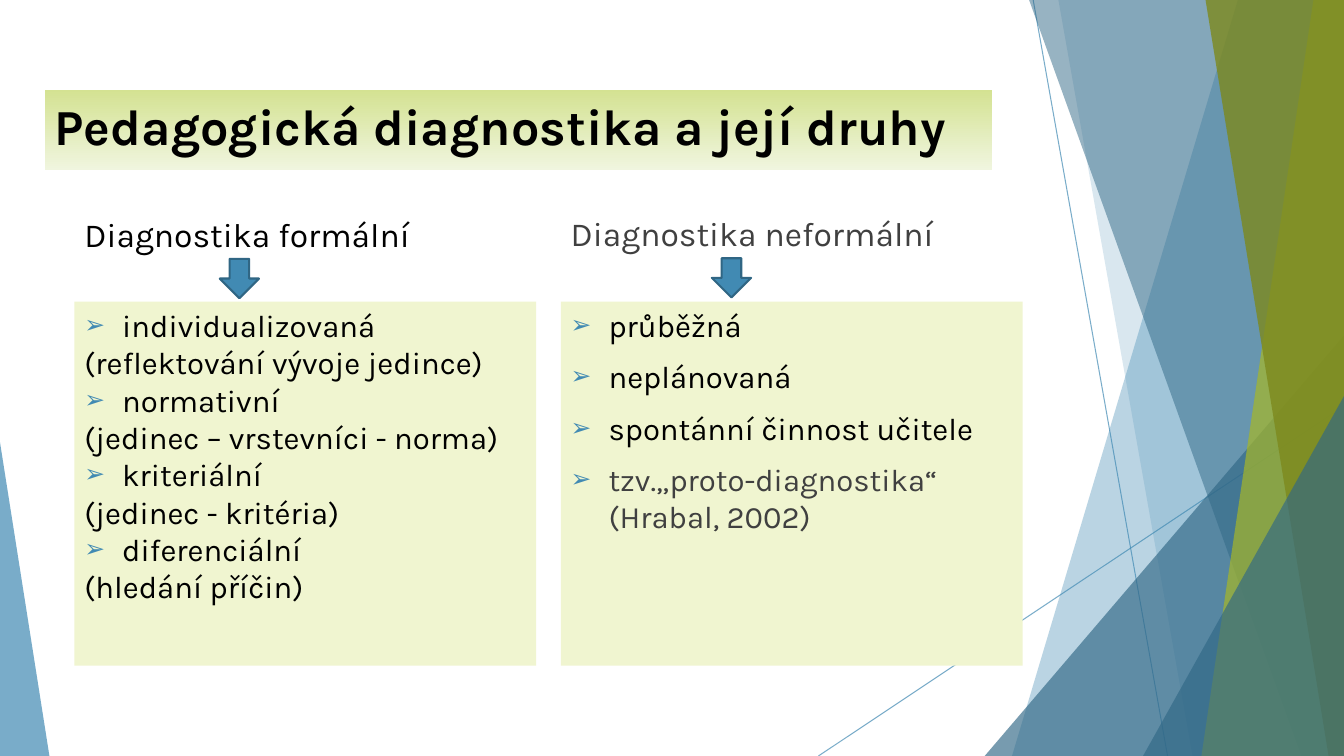
from pptx import Presentation
from pptx.dml.color import RGBColor
from pptx.enum.shapes import MSO_CONNECTOR, MSO_SHAPE
from pptx.enum.text import MSO_ANCHOR, PP_ALIGN
from pptx.oxml.ns import qn
from pptx.util import Pt
from lxml import etree

RECT, TRIANGLE, ARROW = MSO_SHAPE.RECTANGLE, MSO_SHAPE.ISOSCELES_TRIANGLE, MSO_SHAPE.DOWN_ARROW
STRAIGHT = MSO_CONNECTOR.STRAIGHT
LEFT, JUSTIFY = PP_ALIGN.LEFT, PP_ALIGN.JUSTIFY
TOP, BOTTOM = MSO_ANCHOR.TOP, MSO_ANCHOR.BOTTOM

FONT = "Karla"
W, H = 960, 540
COLORS = {
    "blue": "418AB3", "navy": "316886", "outline": "306684",
    "lime": "A6B727", "olive": "7D891D", "panel": "F0F5D0",
    "title_top": "D4E292", "title_end": "F0F5DF",
    "black": "000000", "grey": "404040",
}

# Content
TITLE = "Pedagogická diagnostika a její druhy"
# Each item: text, bulleted, colour
COLUMNS = [
    {"heading": "Diagnostika formální", "color": "black", "left": 53.2,
     "heading_bottom": 185, "arrow": (157, 185), "align": LEFT, "gap": 0,
     "items": [
         ("individualizovaná", True, "black"),
         ("(reflektování vývoje jedince)", False, "black"),
         ("normativní", True, "black"),
         ("(jedinec – vrstevníci - norma)", False, "black"),
         ("kriteriální", True, "black"),
         ("(jedinec - kritéria)", False, "black"),
         ("diferenciální", True, "black"),
         ("(hledání příčin)", False, "black")]},
    {"heading": "Diagnostika neformální", "color": "grey", "left": 400.6,
     "heading_bottom": 184.5, "arrow": (508.5, 184.5), "align": JUSTIFY, "gap": 10,
     "items": [
         ("průběžná", True, "black"),
         ("neplánovaná", True, "black"),
         ("spontánní činnost učitele", True, "black"),
         ("tzv.„proto-diagnostika“ (Hrabal, 2002)", True, "grey")]},
]

# Decoration, back to front
LINES = [((738, 0), (834, H)), ((W, 290), (584.6, H))]
# Band: left edge at the top and bottom; wedge: left, top, right, apex position
DECOR = [
    ("band", (884.2, 722.9), "blue", 36),
    ("band", (756, 851.8), "blue", 20),
    ("wedge", (703.4, 239.8, W, 1), "navy", 66),
    ("band", (735.1, 929.5), "navy", 50),
    ("band", (938.2, 858.2), "lime", 70),
    ("band", (861.1, 949), "olive", 80),
    ("wedge", (816.5, 283, W, 1), "navy", 66),
    ("wedge", (0, 316, 35.3, 0), "blue", 70),
]


def rgb(name):
    return RGBColor.from_string(COLORS[name])


def set_alpha(shape, percent):
    for clr in shape._element.spPr.iter(qn("a:srgbClr")):
        etree.SubElement(clr, qn("a:alpha")).set("val", str(percent * 1000))


def paint(shape, fill):
    shape.shadow.inherit = False
    shape.fill.solid()
    shape.fill.fore_color.rgb = rgb(fill)
    shape.line.fill.background()


def add_box(kind, x, y, w, h, fill):
    s = shapes.add_shape(kind, Pt(x), Pt(y), Pt(w), Pt(h))
    paint(s, fill)
    return s


def write(p, text, size, color, bold=False):
    p.text = text
    f = p.runs[0].font
    f.name, f.size, f.bold = FONT, Pt(size), bold
    f.color.rgb = rgb(color)


def add_bullet(p):
    pPr = p._p.get_or_add_pPr()
    pPr.set("marL", str(Pt(27)))
    pPr.set("indent", str(Pt(-27)))
    clr = etree.SubElement(pPr, qn("a:buClr"))
    etree.SubElement(clr, qn("a:srgbClr")).set("val", COLORS["blue"])
    etree.SubElement(pPr, qn("a:buSzPct")).set("val", "80000")
    etree.SubElement(pPr, qn("a:buFont")).set("typeface", FONT)
    etree.SubElement(pPr, qn("a:buChar")).set("char", "➢")


prs = Presentation()
prs.slide_width, prs.slide_height = Pt(W), Pt(H)
shapes = prs.slides.add_slide(prs.slide_layouts[6]).shapes

# Thin lines
for (x1, y1), (x2, y2) in LINES:
    s = shapes.add_connector(STRAIGHT, Pt(x1), Pt(y1), Pt(x2), Pt(y2))
    s.line.width = Pt(0.75)
    s.line.color.rgb = rgb("blue")
    set_alpha(s, 70)
    etree.SubElement(s._element.spPr, qn("a:effectLst"))

# Transparent bands and wedges
for kind, geometry, color, alpha in DECOR:
    if kind == "band":
        top_x, bottom_x = geometry
        outline = [(W, 0), (W, H), (bottom_x, H)]
        builder = shapes.build_freeform(Pt(top_x), 0)
        builder.add_line_segments([(Pt(x), Pt(y)) for x, y in outline], close=True)
        s = builder.convert_to_shape()
        paint(s, color)
    else:
        x, y, right, apex = geometry
        s = add_box(TRIANGLE, x, y, right - x, H - y, color)
        s.adjustments[0] = apex
    set_alpha(s, alpha)

# Title bar
s = add_box(RECT, 32, 64.5, 676.6, 56.8, "title_end")
s.fill.gradient()
s.fill.gradient_angle = 270
for stop, color in zip(s.fill.gradient_stops, ("title_top", "title_end")):
    stop.color.rgb = rgb(color)
tf = s.text_frame
tf.word_wrap, tf.vertical_anchor = True, TOP
tf.paragraphs[0].alignment = LEFT
write(tf.paragraphs[0], TITLE, 36, "black", True)

# Columns: heading, panel with list, arrow
for col in COLUMNS:
    heading_h = 45
    s = shapes.add_textbox(Pt(col["left"]), Pt(col["heading_bottom"] - heading_h),
                           Pt(330), Pt(heading_h))
    tf = s.text_frame
    tf.word_wrap, tf.vertical_anchor = True, BOTTOM
    write(tf.paragraphs[0], col["heading"], 24, col["color"])

    s = add_box(RECT, col["left"], 215.5, 329.8, 260, "panel")
    tf = s.text_frame
    tf.word_wrap, tf.vertical_anchor = True, TOP
    for i, (text, bulleted, color) in enumerate(col["items"]):
        p = tf.add_paragraph() if i else tf.paragraphs[0]
        p.alignment = col["align"]
        p.space_before = Pt(col["gap"] if i else 0)
        write(p, text, 22.2, color)
        if bulleted:
            add_bullet(p)

    s = add_box(ARROW, *col["arrow"], 28, 28, "blue")
    s.line.color.rgb = rgb("outline")
    s.line.width = Pt(1.5)

prs.save("out.pptx")
